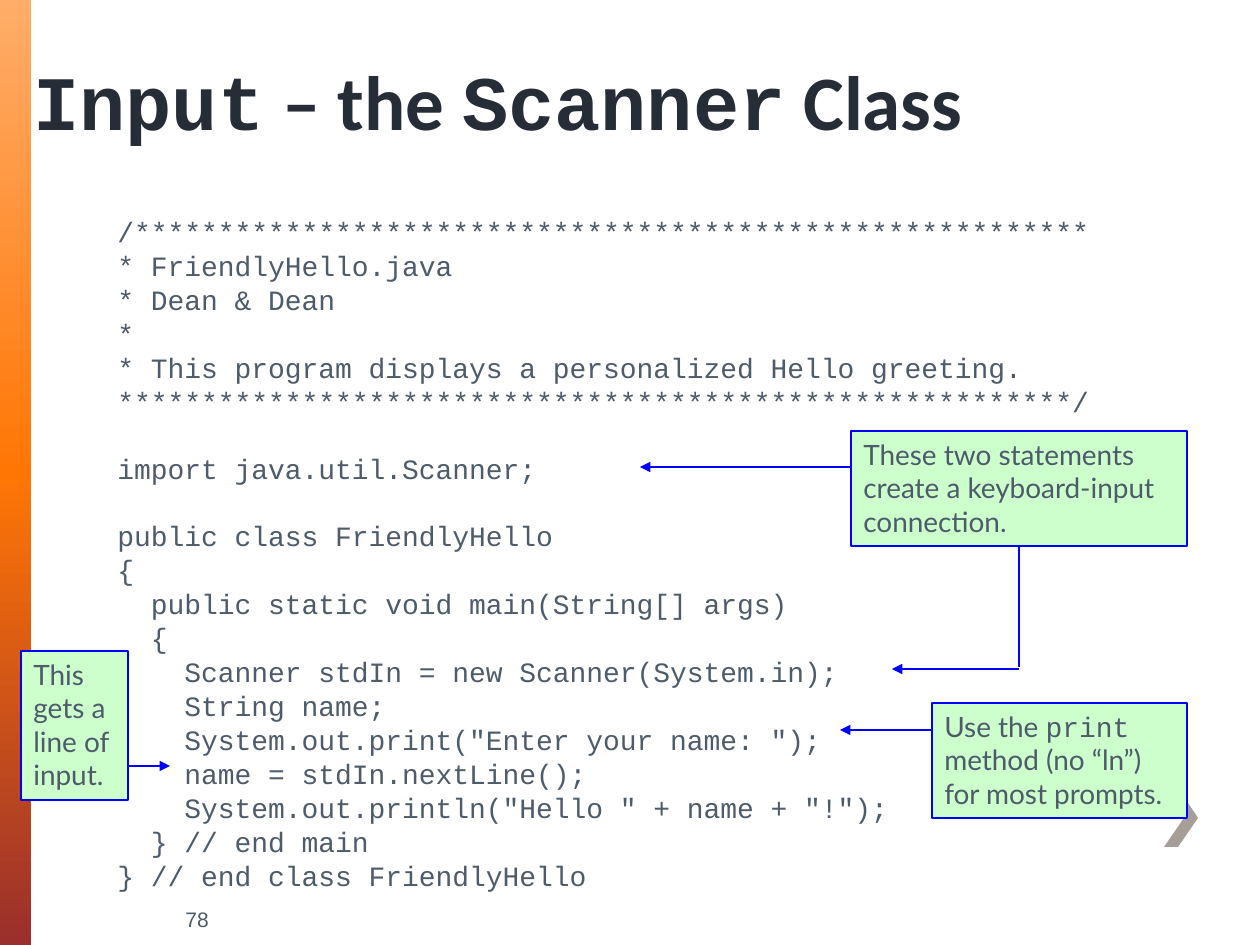
from copy import deepcopy

from lxml.etree import SubElement
from pptx import Presentation
from pptx.dml.color import RGBColor as Rgb
from pptx.enum.shapes import MSO_CONNECTOR as Link, MSO_SHAPE as Preset
from pptx.enum.text import MSO_ANCHOR as Anchor, PP_ALIGN as Align
from pptx.oxml.ns import qn
from pptx.util import Pt

PX = 914400 / 126
COLORS = {
    "ink": "4D5B6B", "heading": "262D36", "chevron": "A79D99",
    "callout": "CCFFCC", "outline": "0000FF",
    "bar_top": "FFAD69", "bar_mid": "FF7605", "bar_end": "9A2F2C",
}
BODY, MONO = "Lato", "Courier New"
CODE = """/*********************************************************
* FriendlyHello.java
* Dean & Dean
*
* This program displays a personalized Hello greeting.
*********************************************************/

import java.util.Scanner;

public class FriendlyHello
{
  public static void main(String[] args)
  {
    Scanner stdIn = new Scanner(System.in);
    String name;
    System.out.print("Enter your name: ");
    name = stdIn.nextLine();
    System.out.println("Hello " + name + "!");
  } // end main
} // end class FriendlyHello"""
LINE_GAP, EMPTY_LINE = 4.1, 18.6


def px(*lengths):
    return [round(length * PX) for length in lengths]


def color(name):
    return Rgb.from_string(COLORS[name])


def apply(target, values):
    for name, value in values.items():
        setattr(target, name, value)


def write(paragraph, runs, size, ink="ink", bold=False):
    for words, face in runs:
        run = paragraph.add_run()
        run.text = words
        apply(run.font, {"name": face, "size": Pt(size), "bold": bold})
        run.font.color.rgb = color(ink)


def add_text(slide, box, runs, size, anchor=Anchor.TOP, **style):
    frame = slide.shapes.add_textbox(*px(*box)).text_frame
    apply(frame, {"word_wrap": True, "vertical_anchor": anchor})
    write(frame.paragraphs[0], runs, size, **style)


def add_bar(slide):
    bar = slide.shapes.add_shape(Preset.RECTANGLE, *px(0, 0, 31, 945))
    bar.shadow.inherit = False
    bar.line.fill.background()
    bar.fill.gradient()
    bar.fill.gradient_angle = 270
    stops = bar.element.spPr.find(".//" + qn("a:gsLst"))
    stops.append(deepcopy(stops[-1]))
    shades = [(0, "bar_top"), (0.5, "bar_mid"), (1, "bar_end")]
    for stop, (position, shade) in zip(bar.fill.gradient_stops, shades):
        stop.position = position
        stop.color.rgb = color(shade)


def add_chevron(slide):
    corners = [(1164, 788), (1184, 818), (1164, 847),
               (1178, 847), (1198, 818)]
    outline = slide.shapes.build_freeform(1178, 788, scale=PX)
    outline.add_line_segments(corners, close=True)
    chevron = outline.convert_to_shape()
    chevron.shadow.inherit = False
    chevron.fill.solid()
    chevron.fill.fore_color.rgb = color("chevron")
    chevron.line.fill.background()


def add_code(slide):
    frame = slide.shapes.add_textbox(*px(105, 215, 1081, 696)).text_frame
    frame.word_wrap = True
    paragraph, gap = frame.paragraphs[0], 0
    for line in CODE.splitlines():
        if not line:
            gap += EMPTY_LINE
            continue
        if paragraph.runs:
            paragraph = frame.add_paragraph()
        apply(paragraph, {"line_spacing": 0.8, "space_before": Pt(gap)})
        write(paragraph, [(line, MONO)], 16)
        gap = LINE_GAP


def add_callout(slide, box, runs):
    callout = slide.shapes.add_shape(Preset.RECTANGLE, *px(*box))
    callout.shadow.inherit = False
    callout.fill.solid()
    callout.fill.fore_color.rgb = color("callout")
    callout.line.color.rgb = color("outline")
    callout.line.width = Pt(0.75)
    frame = callout.text_frame
    apply(frame, {"word_wrap": True, "vertical_anchor": Anchor.TOP})
    frame.paragraphs[0].alignment = Align.LEFT
    write(frame.paragraphs[0], runs, 16)
    return callout


def add_pointer(slide, start, end, arrow=True):
    pointer = slide.shapes.add_connector(Link.STRAIGHT, *px(*start, *end))
    pointer.line.color.rgb = color("outline")
    pointer.line.width = Pt(0.75)
    if arrow:
        SubElement(pointer.line._get_or_add_ln(), qn("a:tailEnd"), type="triangle")
    SubElement(pointer.element.spPr, qn("a:effectLst"))
    return pointer


def main():
    deck = Presentation()
    deck.slide_width, deck.slide_height = px(1260, 945)
    slide = deck.slides.add_slide(deck.slide_layouts[6])

    add_bar(slide)
    add_chevron(slide)
    add_text(slide, (173, 903, 987, 32), [("78", "Arial")], 12, Anchor.MIDDLE)
    heading = [("Input", MONO), (" – the ", "Calibri"),
               ("Scanner", MONO), (" Class", "Calibri")]
    add_text(slide, (21, 53, 1103, 99), heading, 44, Anchor.BOTTOM,
             ink="heading", bold=True)
    add_code(slide)

    connection = add_callout(slide, (851, 431, 336, 115), [
        ("These two statements create a keyboard-input connection.", BODY)])
    add_callout(slide, (932, 703, 255, 115), [
        ("Use the ", BODY), ("print", MONO),
        (" method (no “ln”) for most prompts.", BODY)])
    add_callout(slide, (21, 651, 107, 149), [("This gets a line of input.", BODY)])

    add_pointer(slide, (851, 467), (640, 467))
    stem = add_pointer(slide, (1019, 546), (1019, 667), arrow=False)
    stem.begin_connect(connection, 2)
    add_pointer(slide, (1019, 669), (892, 669))
    add_pointer(slide, (128, 766), (170, 766))
    add_pointer(slide, (932, 730), (840, 730))
    deck.save("out.pptx")


if __name__ == "__main__":
    main()
